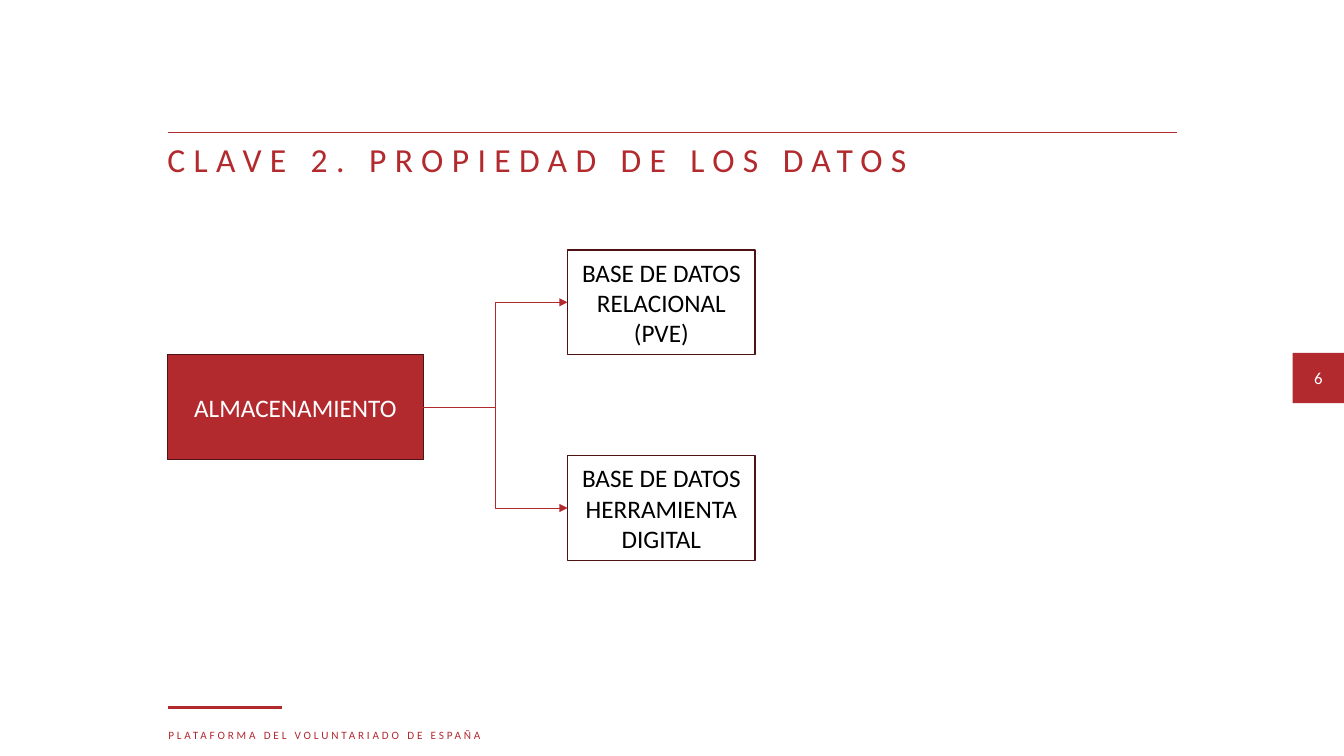
from lxml.etree import SubElement
from pptx import Presentation
from pptx.dml.color import RGBColor
from pptx.enum.shapes import MSO_CONNECTOR, MSO_SHAPE
from pptx.enum.text import MSO_ANCHOR, PP_ALIGN
from pptx.oxml.ns import qn
from pptx.util import Pt

PX = 9144  # 100 px to the inch
RED, DARK_RED, WHITE, BLACK = "B2292E", "4E1214", "FFFFFF", "000000"


def write(s, text, size=18, color=BLACK, align=PP_ALIGN.CENTER,
          anchor=MSO_ANCHOR.MIDDLE, left=10, tracking=0, line_spacing=None):
    """Fill a shape with one paragraph per line of text."""
    tf = s.text_frame
    tf.word_wrap = True
    tf.vertical_anchor = anchor
    tf.margin_left, tf.margin_right = left * PX, 10 * PX
    tf.margin_top = tf.margin_bottom = 5 * PX
    for i, line in enumerate(text.split("\n")):
        p = tf.paragraphs[0] if i == 0 else tf.add_paragraph()
        p.alignment = align
        p.line_spacing = line_spacing
        r = p.add_run()
        r.text = line
        r.font.name = "Calibri"
        r.font.size = Pt(size)
        r.font.color.rgb = RGBColor.from_string(color)
        if tracking:
            r.font._element.set("spc", str(tracking * 100))


def connect(kind, x1, y1, x2, y2, width):
    c = shapes.add_connector(kind, x1, y1, x2, y2)
    c.line.color.rgb = RGBColor.from_string(RED)
    c.line.width = Pt(width)
    SubElement(c._element.spPr, qn("a:effectLst"))
    return c


prs = Presentation()
prs.slide_width, prs.slide_height = 1333 * PX, 750 * PX
shapes = prs.slides.add_slide(prs.slide_layouts[6]).shapes

# Rules above the title and the footer
for x2, y, width in [(1167, 131, 0.75), (280, 702, 2.25)]:
    connect(MSO_CONNECTOR.STRAIGHT, 167 * PX, y * PX, x2 * PX, y * PX, width)

# Title and footer
for text, box, size, tracking, spacing in [
    ("CLAVE 2. PROPIEDAD DE LOS DATOS", (166, 137, 1078, 54), 24, 6, 0.9),
    ("PLATAFORMA DEL VOLUNTARIADO DE ESPAÑA", (167, 718, 667, 24), 8, 2, None),
]:
    s = shapes.add_textbox(*[v * PX for v in box])
    write(s, text, size, RED, PP_ALIGN.LEFT, MSO_ANCHOR.TOP, 0, tracking, spacing)

# Page number and diagram boxes
boxes = []
for text, box, size, color, fill, outline in [
    ("6", (1282, 350, 51, 50), 12, WHITE, RED, None),
    ("ALMACENAMIENTO", (166, 352, 254, 104), 18, WHITE, RED, DARK_RED),
    ("BASE DE DATOS\nRELACIONAL (PVE)", (563, 248, 186, 104), 18, BLACK, None, DARK_RED),
    ("BASE DE DATOS\nHERRAMIENTA DIGITAL", (563, 452, 186, 104), 18, BLACK, None, DARK_RED),
]:
    s = shapes.add_shape(MSO_SHAPE.RECTANGLE, *[v * PX for v in box])
    s.shadow.inherit = False
    if fill:
        s.fill.solid()
        s.fill.fore_color.rgb = RGBColor.from_string(fill)
    else:
        s.fill.background()
    if outline:
        s.line.color.rgb = RGBColor.from_string(outline)
        s.line.width = Pt(1)
    else:
        s.line.fill.background()
    write(s, text, size, color)
    boxes.append(s)

# Arrows from the storage box to each database
page, storage, *databases = boxes
for database in databases:
    c = connect(MSO_CONNECTOR.ELBOW,
                storage.left + storage.width, storage.top + storage.height // 2,
                database.left, database.top + database.height // 2, 0.5)
    c.begin_connect(storage, 3)
    c.end_connect(database, 1)
    SubElement(c.line._get_or_add_ln(), qn("a:tailEnd"), type="triangle")

prs.save("out.pptx")
